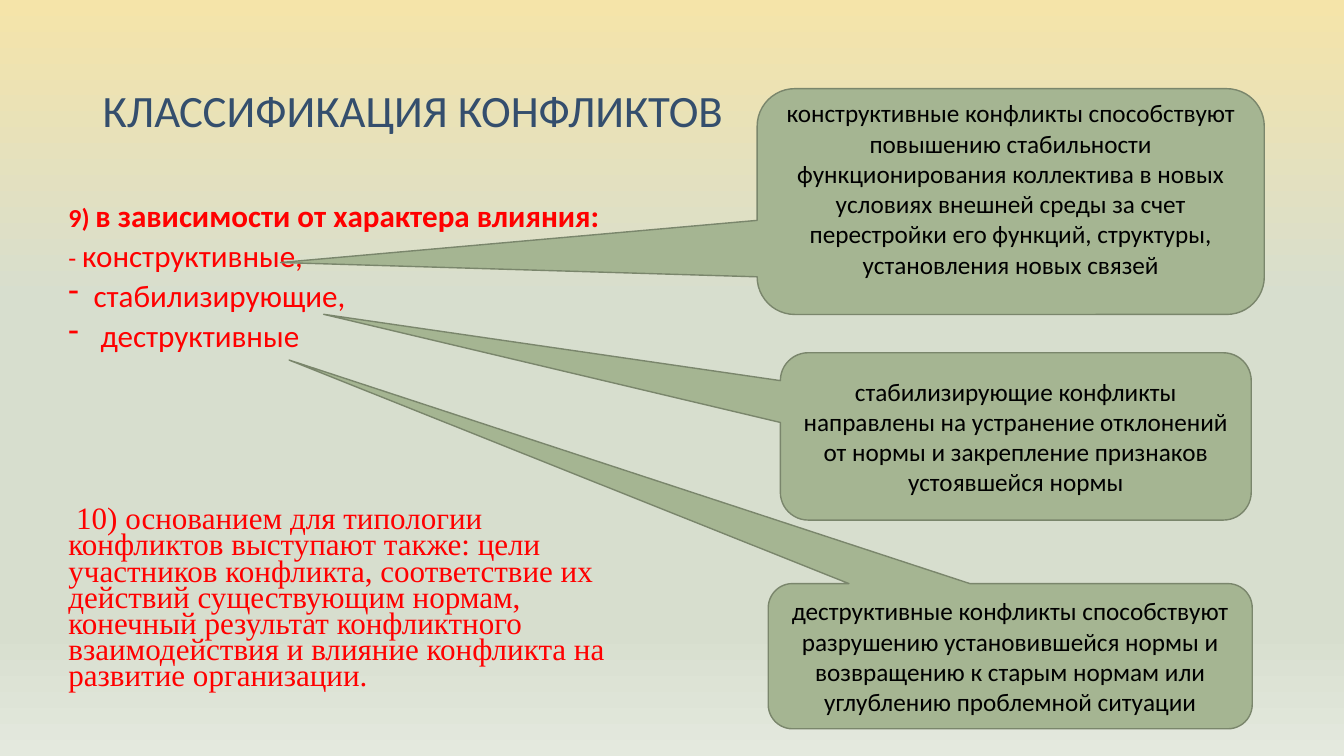
from dataclasses import dataclass

from lxml import etree
from pptx import Presentation
from pptx.dml.color import RGBColor
from pptx.enum.shapes import MSO_SHAPE
from pptx.enum.text import MSO_ANCHOR, PP_ALIGN
from pptx.oxml.ns import qn
from pptx.util import Inches, Pt

CALLOUT = MSO_SHAPE.ROUNDED_RECTANGULAR_CALLOUT
MIDDLE, TOP = MSO_ANCHOR.MIDDLE, MSO_ANCHOR.TOP
LEFT, CENTER = PP_ALIGN.LEFT, PP_ALIGN.CENTER


@dataclass(frozen=True)
class Theme:
    font: str = "Calibri"
    serif: str = "Times New Roman"
    title: str = "344E6D"
    accent: str = "FF0000"
    ink: str = "000000"
    callout_fill: str = "A5B592"
    callout_line: str = "7A866C"
    background: tuple = ((0, "F5E4A9"), (40, "D7DECE"), (83, "D7DECE"), (100, "E4E9DE"))
    title_size: float = 32
    body_size: float = 22.2
    marker_size: float = 18.5
    callout_size: float = 18


@dataclass(frozen=True)
class Box:
    left: float
    top: float
    width: float
    height: float

    def lengths(self):
        return [Inches(v) for v in (self.left, self.top, self.width, self.height)]


@dataclass(frozen=True)
class Callout:
    box: Box
    tip: tuple[float, float]
    text: str
    top_inset: float = 0.05
    bottom_inset: float = 0.05


@dataclass(frozen=True)
class ListLine:
    text: str
    marker: str = ""
    bold: bool = False
    bulleted: bool = False


THEME = Theme()

LIST_LINES = [
    ListLine("в зависимости от характера влияния:", marker="9) ", bold=True),
    ListLine("конструктивные,", marker="- "),
    ListLine("стабилизирующие,", bulleted=True),
    ListLine(" деструктивные", bulleted=True),
]

TYPOLOGY = (
    " 10) основанием для типологии конфликтов выступают также: цели участников "
    "конфликта, соответствие их действий существующим нормам, конечный результат "
    "конфликтного взаимодействия и влияние конфликта на развитие организации."
)

CALLOUTS = [
    Callout(Box(7.51, 0.88, 5.03, 2.24), (-1.44, 0.27),
            "конструктивные конфликты способствуют повышению стабильности "
            "функционирования коллектива в новых условиях внешней среды за счет "
            "перестройки его функций, структуры, установления новых связей",
            top_inset=0, bottom_inset=0.26),
    Callout(Box(7.74, 3.5, 4.67, 1.66), (-1.47, -0.73),
            "стабилизирующие конфликты направлены на устранение отклонений от нормы "
            "и закрепление признаков устоявшейся нормы"),
    Callout(Box(7.62, 5.79, 4.8, 1.44), (-1.49, -2.04),
            "деструктивные конфликты способствуют разрушению установившейся нормы и "
            "возвращению к старым нормам или углублению проблемной ситуации"),
]


def rgb(color: str) -> RGBColor:
    return RGBColor.from_string(color)


def add_text(paragraph, text: str, *, size: float, color: str, font: str = THEME.font,
             bold: bool = False, align=LEFT, line_spacing: float = 1.0) -> None:
    """Append a formatted run and set the format of its paragraph."""
    paragraph.alignment = align
    paragraph.line_spacing = line_spacing
    run = paragraph.add_run()
    run.text = text
    run.font.name = font
    run.font.size = Pt(size)
    run.font.bold = bold
    run.font.color.rgb = rgb(color)


def add_text_frame(slide, box: Box, anchor=TOP):
    frame = slide.shapes.add_textbox(*box.lengths()).text_frame
    frame.word_wrap = True
    frame.vertical_anchor = anchor
    return frame


def paint_background(slide) -> None:
    fill = slide.background.fill
    fill.gradient()
    fill.gradient_angle = 270
    stops = next(slide.background._cSld.iter(qn("a:gsLst")))
    for stop in list(stops):
        stops.remove(stop)
    for percent, color in THEME.background:
        stop = etree.SubElement(stops, qn("a:gs"), pos=str(percent * 1000))
        etree.SubElement(stop, qn("a:srgbClr"), val=color)


def add_dash_bullet(paragraph) -> None:
    properties = paragraph._p.get_or_add_pPr()
    properties.set("marL", str(Inches(0.25)))
    properties.set("indent", str(-Inches(0.25)))
    etree.SubElement(properties, qn("a:buFontTx"))
    etree.SubElement(properties, qn("a:buChar"), char="-")


def add_list(slide, box: Box) -> None:
    frame = add_text_frame(slide, box)
    for index, line in enumerate(LIST_LINES):
        paragraph = frame.add_paragraph() if index else frame.paragraphs[0]
        paragraph.space_before = Pt(10 if index else 0)
        for text, size in ((line.marker, THEME.marker_size), (line.text, THEME.body_size)):
            if text:
                add_text(paragraph, text, size=size, color=THEME.accent,
                         bold=line.bold, line_spacing=0.7)
        if line.bulleted:
            add_dash_bullet(paragraph)


def add_callout(slide, callout: Callout) -> None:
    shape = slide.shapes.add_shape(CALLOUT, *callout.box.lengths())
    shape.shadow.inherit = False
    shape.adjustments[0], shape.adjustments[1] = callout.tip
    shape.fill.solid()
    shape.fill.fore_color.rgb = rgb(THEME.callout_fill)
    shape.line.color.rgb = rgb(THEME.callout_line)
    shape.line.width = Pt(1)
    frame = shape.text_frame
    frame.word_wrap = True
    frame.vertical_anchor = MIDDLE
    frame.margin_top = Inches(callout.top_inset)
    frame.margin_bottom = Inches(callout.bottom_inset)
    add_text(frame.paragraphs[0], callout.text, size=THEME.callout_size,
             color=THEME.ink, align=CENTER)


def main() -> None:
    deck = Presentation()
    deck.slide_width, deck.slide_height = Inches(13.33), Inches(7.5)
    slide = deck.slides.add_slide(deck.slide_layouts[6])
    paint_background(slide)

    title = add_text_frame(slide, Box(0.92, 0.4, 11.5, 1.45), anchor=MIDDLE)
    add_text(title.paragraphs[0], "КЛАССИФИКАЦИЯ КОНФЛИКТОВ", size=THEME.title_size,
             color=THEME.title, line_spacing=0.9)
    add_list(slide, Box(0.58, 2, 5.88, 1.6))
    typology = add_text_frame(slide, Box(0.58, 5, 5.88, 1.95))
    add_text(typology.paragraphs[0], TYPOLOGY, size=THEME.body_size,
             color=THEME.accent, font=THEME.serif, line_spacing=0.7)
    for callout in CALLOUTS:
        add_callout(slide, callout)

    deck.save("out.pptx")


if __name__ == "__main__":
    main()
